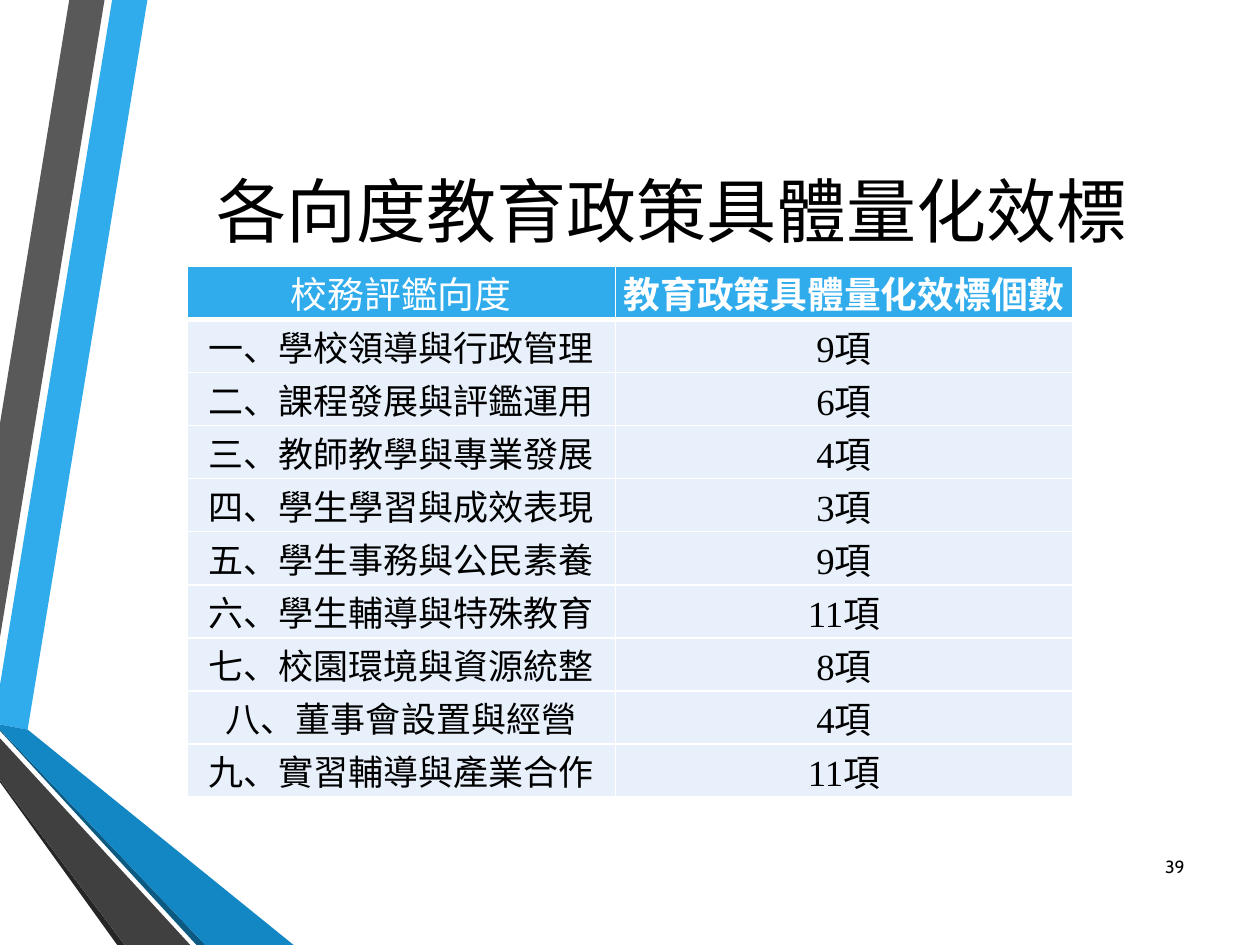
from lxml import etree
from pptx import Presentation, util as u
from pptx.dml.color import RGBColor
from pptx.enum import text as t
from pptx.oxml import ns

BLUE = RGBColor(0x30, 0xAC, 0xEC)
MID_BLUE = RGBColor(0x12, 0x87, 0xC3)
DEEP_BLUE = RGBColor(0x0C, 0x5A, 0x82)
PALE_BLUE = RGBColor(0xE8, 0xF1, 0xFB)
GRAY = RGBColor(0x59, 0x59, 0x59)
DARK_GRAY = RGBColor(0x40, 0x40, 0x40)
CHARCOAL = RGBColor(0x26, 0x26, 0x26)
BLACK = RGBColor(0, 0, 0)
WHITE = RGBColor(0xFF, 0xFF, 0xFF)

RIBBONS = [
    (BLUE, [(0, 391.5), (0, 414), (15.84, 416.9), (84.24, 0), (64.1, 0)]),
    (GRAY, [(59.76, 0), (39.6, 0), (0, 242), (0, 364.3)]),
    (CHARCOAL, [(0, 445.7), (0, 447), (67, 540), (71.3, 540)]),
    (DEEP_BLUE, [(0, 416.9), (0, 417.6), (112.3, 540), (117.4, 540)]),
    (MID_BLUE, [(0, 416.9), (117.4, 540), (167.8, 540), (15.84, 416.9), (0, 414)]),
    (DARK_GRAY, [(0, 445.7), (71.3, 540), (108.7, 540), (0, 421.9)]),
]

HEADINGS = ("校務評鑑向度", "教育政策具體量化效標個數")
INDICATORS = [
    ("一、學校領導與行政管理", 9),
    ("二、課程發展與評鑑運用", 6),
    ("三、教師教學與專業發展", 4),
    ("四、學生學習與成效表現", 3),
    ("五、學生事務與公民素養", 9),
    ("六、學生輔導與特殊教育", 11),
    ("七、校園環境與資源統整", 8),
    ("八、董事會設置與經營", 4),
    ("九、實習輔導與產業合作", 11),
]
COLUMN_WIDTHS = (244.8, 261.4)
ROW_HEIGHT = 30.35


def write_text(frame, content, *, size, font="Cabin", color=BLACK, bold=False,
               align=t.PP_ALIGN.CENTER):
    paragraph = frame.paragraphs[0]
    paragraph.alignment = align
    run = paragraph.add_run()
    run.text = content
    run.font.size = u.Pt(size)
    run.font.name = font
    run.font.bold = bold
    run.font.color.rgb = color


def add_text_box(slide, left, top, width, height, content, **text_format):
    shape = slide.shapes.add_textbox(u.Pt(left), u.Pt(top), u.Pt(width), u.Pt(height))
    shape.text_frame.word_wrap = True
    shape.text_frame.vertical_anchor = t.MSO_ANCHOR.MIDDLE
    write_text(shape.text_frame, content, **text_format)


def add_ribbon(slide, color, points):
    corners = [(u.Pt(x), u.Pt(y)) for x, y in points]
    builder = slide.shapes.build_freeform(*corners[0])
    builder.add_line_segments(corners[1:], close=True)
    shape = builder.convert_to_shape()
    shape.shadow.inherit = False
    shape.fill.solid()
    shape.fill.fore_color.rgb = color
    shape.line.fill.background()


def set_borders(cell, bottom):
    properties = cell._tc.get_or_add_tcPr()
    for side, width in (("L", 1), ("R", 1), ("T", 1), ("B", bottom)):
        line = etree.SubElement(properties, ns.qn(f"a:ln{side}"), w=str(u.Pt(width)))
        fill = etree.SubElement(line, ns.qn("a:solidFill"))
        etree.SubElement(fill, ns.qn("a:srgbClr"), val=str(WHITE))


def fill_cell(cell, content, *, fill, anchor, bottom=1, **text_format):
    cell.margin_left = cell.margin_right = u.Pt(2.9)
    cell.margin_top = cell.margin_bottom = u.Pt(0)
    cell.vertical_anchor = anchor
    set_borders(cell, bottom)
    cell.fill.solid()
    cell.fill.fore_color.rgb = fill
    write_text(cell.text_frame, content, font="Times New Roman", **text_format)


def add_indicator_table(slide, left, top):
    row_count = len(INDICATORS) + 1
    table = slide.shapes.add_table(
        row_count, len(HEADINGS), u.Pt(left), u.Pt(top),
        u.Pt(sum(COLUMN_WIDTHS)), u.Pt(ROW_HEIGHT * row_count)).table
    for column, width in zip(table.columns, COLUMN_WIDTHS):
        column.width = u.Pt(width)
    for row in table.rows:
        row.height = u.Pt(ROW_HEIGHT)
    for index, heading in enumerate(HEADINGS):
        fill_cell(table.cell(0, index), heading, fill=BLUE, anchor=t.MSO_ANCHOR.TOP,
                  bottom=3, size=21, color=WHITE, bold=index == 1)
    for index, (dimension, count) in enumerate(INDICATORS, start=1):
        for column, (content, size) in enumerate(((dimension, 20), (f"{count}項", 21))):
            fill_cell(table.cell(index, column), content, fill=PALE_BLUE,
                      anchor=t.MSO_ANCHOR.MIDDLE, size=size)


def main():
    presentation = Presentation()
    presentation.slide_width = u.Pt(720)
    presentation.slide_height = u.Pt(540)
    slide = presentation.slides.add_slide(presentation.slide_layouts[6])
    for color, points in RIBBONS:
        add_ribbon(slide, color, points)
    add_text_box(slide, 87.8, 67.7, 591.8, 103.7, "各向度教育政策具體量化效標", size=40)
    add_text_box(slide, 650.2, 481, 33.8, 28.8, "39", size=10, align=t.PP_ALIGN.RIGHT)
    add_indicator_table(slide, 106.8, 152.2)
    presentation.save("out.pptx")


if __name__ == "__main__":
    main()
